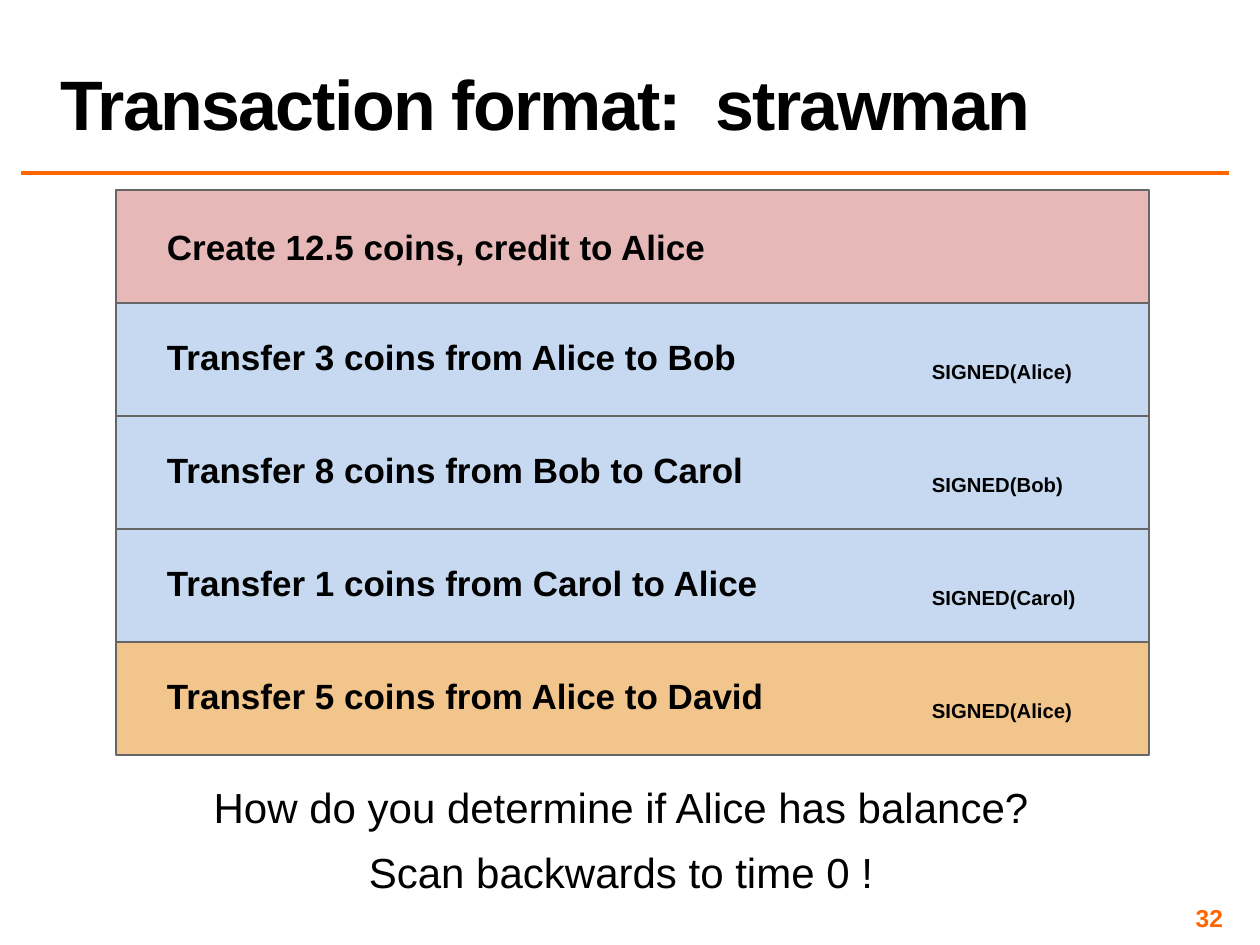
from pptx import Presentation
from pptx.dml.color import RGBColor
from pptx.enum import shapes, text
from pptx.oxml.ns import qn
from pptx.util import Pt
from lxml import etree

PX = 914400 / 126
HUES = {"ink": "000000", "accent": "FF6600", "edge": "666666",
        "create": "E6B9B8", "past": "C6D9F1", "next": "F1C58B"}
ROWS = [
    ("Create 12.5 coins, credit to Alice", "", "create"),
    ("Transfer 3 coins from Alice to Bob", "Alice", "past"),
    ("Transfer 8 coins from Bob to Carol", "Bob", "past"),
    ("Transfer 1 coins from Carol to Alice", "Carol", "past"),
    ("Transfer 5 coins from Alice to David", "Alice", "next"),
]


def px(*vals):
    return [round(v * PX) for v in vals]


def hue(name):
    return RGBColor.from_string(HUES[name])


def style(para, size, bold=False, color="ink", align=text.PP_ALIGN.LEFT):
    font = para.font
    font.name, font.size, font.bold = "Arial", Pt(size), bold
    font.color.rgb = hue(color)
    para.alignment = align


def pad(frame, gap, anchor):
    gap, = px(gap)
    frame.margin_left = frame.margin_right = gap
    frame.margin_top = frame.margin_bottom = gap
    frame.vertical_anchor = anchor
    frame.word_wrap = True


def head(slide, x, y, w, h):
    title = slide.shapes.title
    title.left, title.top, title.width, title.height = px(x, y, w, h)
    frame = title.text_frame
    frame.text = "Transaction format:  strawman"
    frame.vertical_anchor = text.MSO_ANCHOR.BOTTOM
    frame.auto_size = text.MSO_AUTO_SIZE.NONE
    para = frame.paragraphs[0]
    style(para, 40, True)
    para.line_spacing = 0.8
    para.runs[0].font._element.set("spc", "-100")


def rule(slide, x, y, w):
    line = slide.shapes.add_connector(
        shapes.MSO_CONNECTOR.STRAIGHT, *px(x, y, x + w, y))
    line.line.color.rgb = hue("accent")
    line.line.width = Pt(2)
    etree.SubElement(line._element.spPr, qn("a:effectLst"))


def row(slide, x, y, w, h, deed, signer, fill):
    box = slide.shapes.add_shape(shapes.MSO_SHAPE.RECTANGLE, *px(x, y, w, h))
    box.shadow.inherit = False
    box.fill.solid()
    box.fill.fore_color.rgb = hue(fill)
    box.line.color.rgb = hue("edge")
    box.line.width = Pt(1.5)
    frame = box.text_frame
    pad(frame, 13, text.MSO_ANCHOR.MIDDLE)
    frame.margin_left, = px(51)
    para = frame.paragraphs[0]
    style(para, 20, True)
    para.add_run().text = deed
    if signer:
        # Signatures line up at a tab stop, as subscripts
        stops = etree.SubElement(para._p.get_or_add_pPr(), qn("a:tabLst"))
        etree.SubElement(stops, qn("a:tab"), pos=str(px(765)[0]), algn="l")
        # Schema order: the tab list precedes the run defaults
        stops.getparent().insert(
            list(stops.getparent()).index(para.font._element), stops)
        para.add_run().text = "\t"
        sign = para.add_run()
        sign.text = f"SIGNED({signer})"
        sign.font._element.set("baseline", "-25000")


def ledger(slide, x, y, w, h):
    for i, parts in enumerate(ROWS):
        row(slide, x, y + i * h, w, h, *parts)


def ask(slide, x, y, w, h):
    frame = slide.shapes.add_textbox(*px(x, y, w, h)).text_frame
    pad(frame, 13, text.MSO_ANCHOR.TOP)
    frame.text = "How do you determine if Alice has balance?\nScan backwards to time 0 !"
    for para in frame.paragraphs:
        style(para, 24, align=text.PP_ALIGN.CENTER)
    first = frame.paragraphs[0]
    first.space_after = Pt(8)
    first._p.get_or_add_pPr().set("marR", str(px(23)[0]))


def folio(slide, x, y, w, h):
    frame = slide.shapes.add_textbox(*px(x, y, w, h)).text_frame
    pad(frame, 5, text.MSO_ANCHOR.MIDDLE)
    frame.text = "32"
    style(frame.paragraphs[0], 14, True, "accent", text.PP_ALIGN.RIGHT)


def main():
    deck = Presentation()
    deck.slide_width, deck.slide_height = px(1260, 945)
    slide = deck.slides.add_slide(deck.slide_layouts[5])
    head(slide, 48, 3, 1180, 147)
    rule(slide, 21, 173, 1208)
    ledger(slide, 116, 190, 1033, 113)
    ask(slide, 151, 769, 963, 140)
    folio(slide, 935, 903, 293, 29)
    deck.save("out.pptx")


if __name__ == "__main__":
    main()
